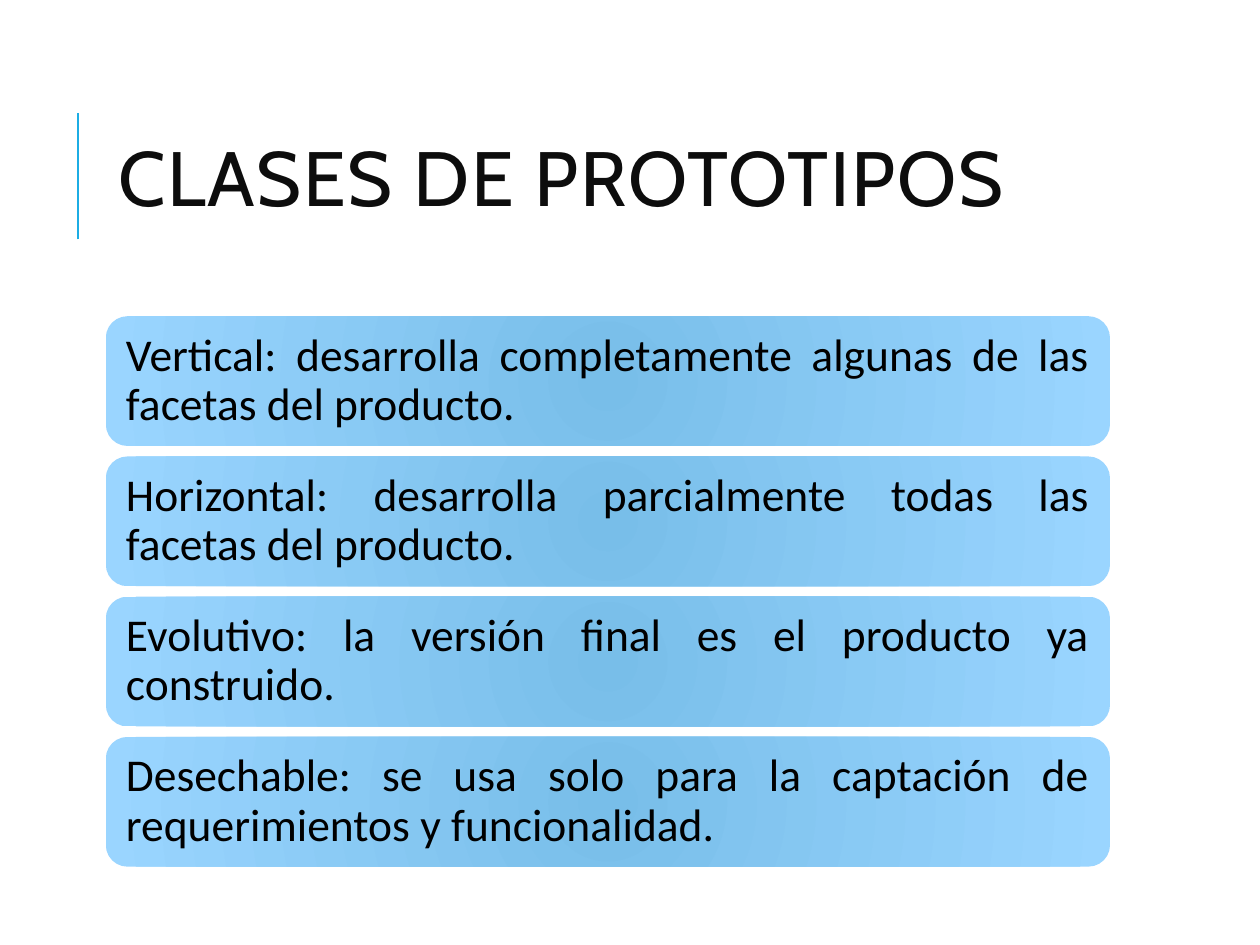
import lxml.etree
import pptx
import pptx.dml.color
import pptx.enum.shapes
import pptx.enum.text
import pptx.oxml.ns
import pptx.util

Inches = pptx.util.Inches
Pt = pptx.util.Pt
LEFT, WIDTH = 0.84, 7.97
TOP, HEIGHT, STEP = 2.51, 1.03, 1.113
CLASSES = [
    "Vertical: desarrolla completamente algunas de las facetas del producto.",
    "Horizontal: desarrolla parcialmente todas las facetas del producto.",
    "Evolutivo: la versión final es el producto ya construido.",
    "Desechable: se usa solo para la captación de requerimientos y funcionalidad.",
]


def color(code):
    return pptx.dml.color.RGBColor.from_string(code)


def add_tag(parent, name, **attrs):
    return lxml.etree.SubElement(parent, pptx.oxml.ns.qn(name), attrs)


def style(frame, font, size, code, align, spacing):
    frame.word_wrap = True
    frame.vertical_anchor = pptx.enum.text.MSO_ANCHOR.MIDDLE
    para = frame.paragraphs[0]
    para.alignment = align
    para.line_spacing = spacing
    run = para.runs[0]
    run.font.name = font
    run.font.size = Pt(size)
    run.font.color.rgb = color(code)
    return para


def add_title(slide, text):
    title = slide.shapes.title
    title.left, title.top = Inches(LEFT), Inches(0.64)
    title.width, title.height = Inches(WIDTH), Inches(1.64)
    frame = title.text_frame
    frame.text = text
    frame.auto_size = pptx.enum.text.MSO_AUTO_SIZE.NONE
    para = style(frame, "Cabin", 44, "0D0D0D", pptx.enum.text.PP_ALIGN.LEFT, 0.8)
    para.runs[0].font._element.set("spc", "100")


def add_rule(slide):
    line = slide.shapes.add_connector(
        pptx.enum.shapes.MSO_CONNECTOR.STRAIGHT,
        Inches(0.62), Inches(1.9), Inches(0.62), Inches(0.9))
    line.line.color.rgb = color("1CADE4")
    line.line.width = Pt(1.5)
    add_tag(line._element.spPr, "a:effectLst")


def fill_radial(shape, inner, outer):
    """Fill the shape with a circular gradient around its centre."""
    fill = shape.fill
    fill.gradient()
    for stop, code, place in zip(fill.gradient_stops, (inner, outer), (0, 1)):
        stop.color.rgb = color(code)
        stop.position = place
    grad = shape._element.spPr.find(pptx.oxml.ns.qn("a:gradFill"))
    grad.remove(grad.find(pptx.oxml.ns.qn("a:lin")))
    ring = add_tag(grad, "a:path", path="circle")
    add_tag(ring, "a:fillToRect", l="50000", t="50000", r="50000", b="50000")


def add_card(slide, top, text):
    card = slide.shapes.add_shape(
        pptx.enum.shapes.MSO_SHAPE.ROUNDED_RECTANGLE,
        Inches(LEFT), Inches(top), Inches(WIDTH), Inches(HEIGHT))
    card.shadow.inherit = False
    card.line.fill.background()
    fill_radial(card, "78BEE9", "9AD5FF")
    frame = card.text_frame
    frame.text = text
    frame.margin_left = frame.margin_right = Inches(0.11)
    frame.margin_top = frame.margin_bottom = Inches(0.11)
    para = style(frame, "Calibri", 26, "000000", pptx.enum.text.PP_ALIGN.JUSTIFY, 0.9)
    para.space_after = Pt(9)


def main():
    deck = pptx.Presentation()
    deck.slide_width, deck.slide_height = Inches(10), Inches(7.5)
    slide = deck.slides.add_slide(deck.slide_layouts[5])
    add_rule(slide)
    add_title(slide, "CLASES DE PROTOTIPOS")
    for row, text in enumerate(CLASSES):
        add_card(slide, TOP + row * STEP, text)
    deck.save("out.pptx")


if __name__ == "__main__":
    main()
